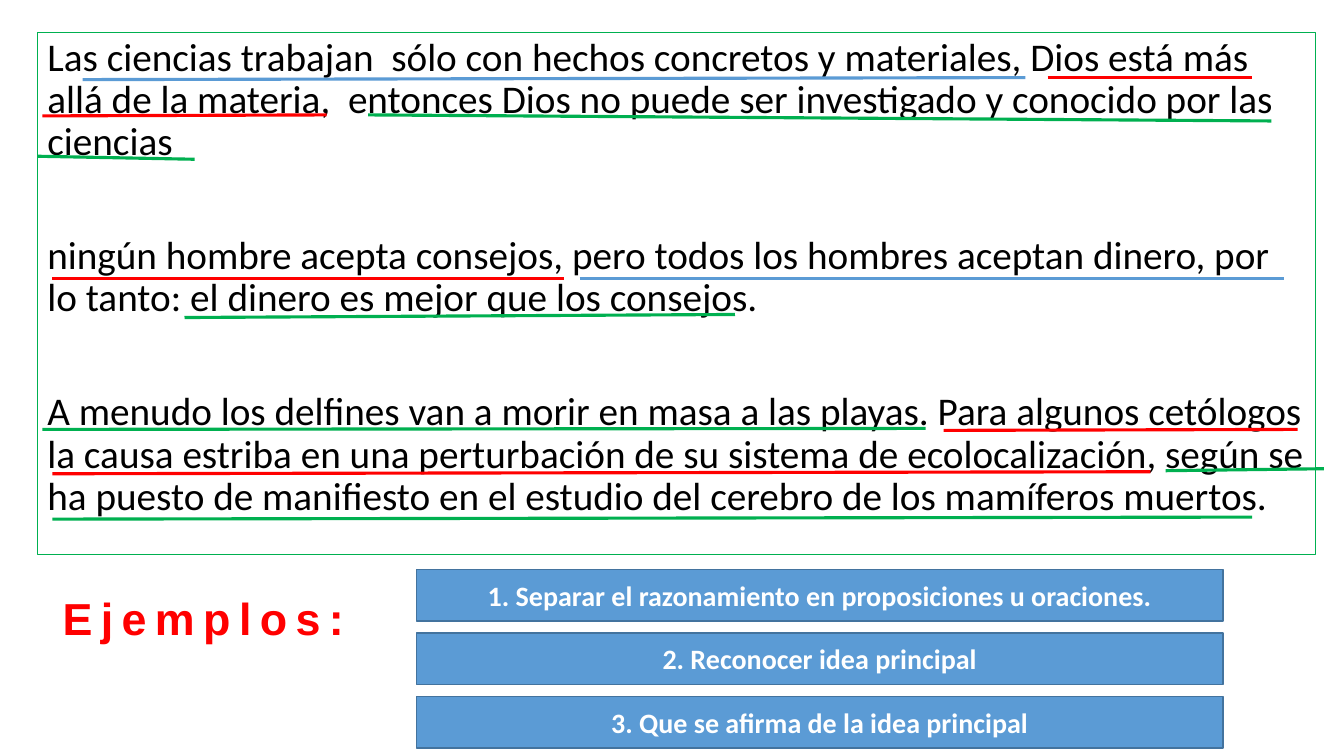
from lxml.etree import SubElement
from pptx import Presentation
from pptx.dml.color import RGBColor
from pptx.enum.shapes import MSO_CONNECTOR, MSO_SHAPE
from pptx.enum.text import MSO_ANCHOR, MSO_AUTO_SIZE, PP_ALIGN
from pptx.oxml.ns import qn
from pptx.util import Inches, Pt

COLORS = {
    "green": "00B050",
    "red": "FF0000",
    "blue": "5B9BD5",
    "edge": "43739E",
    "black": "000000",
    "white": "FFFFFF",
}
HEADING = "Ejemplos:"
ARGUMENTS = [
    "Las ciencias trabajan  sólo con hechos concretos y materiales, Dios está más allá de la materia,  "
    "entonces Dios no puede ser investigado y conocido por las ciencias",
    "ningún hombre acepta consejos, pero todos los hombres aceptan dinero, por lo tanto: "
    "el dinero es mejor que los consejos.",
    "A menudo los delfines van a morir en masa a las playas. Para algunos cetólogos la causa estriba "
    "en una perturbación de su sistema de ecolocalización, según se ha puesto de manifiesto en el "
    "estudio del cerebro de los mamíferos muertos.",
]
STEPS = [
    "1. Separar el razonamiento en proposiciones u oraciones.",
    "2. Reconocer idea principal",
    "3. Que se afirma de la idea principal",
]
UNDERLINES = [
    ("blue", 0.82, 0.79, 10.17, 0.77),
    ("red", 10.39, 0.77, 12.42, 0.77),
    ("red", 0.42, 1.15, 3.24, 1.14),
    ("green", 3.65, 1.14, 12.61, 1.2),
    ("green", 0.37, 1.55, 1.93, 1.58),
    ("green", 0.42, 4.26, 9.18, 4.25),
    ("red", 9.36, 4.27, 12.87, 4.26),
    ("red", 0.52, 4.7, 11.41, 4.68),
    ("green", 0.52, 5.15, 12.42, 5.13),
    ("green", 11.56, 4.67, 13.13, 4.65),
    ("green", 1.83, 3.15, 7.29, 3.12),
    ("red", 0.52, 2.76, 5.59, 2.76),
    ("blue", 5.75, 2.76, 12.73, 2.76),
]
STEP_TOP, STEP_PITCH = 5.65, 0.63


def color(name):
    return RGBColor.from_string(COLORS[name])


def place(shape, left, top, width, height):
    shape.left, shape.top = Inches(left), Inches(top)
    shape.width, shape.height = Inches(width), Inches(height)


def set_line(line, name, width):
    line.color.rgb = color(name)
    line.width = Pt(width)


def set_font(para, face, size, name, bold=False):
    para.font.name, para.font.size, para.font.bold = face, Pt(size), bold
    para.font.color.rgb = color(name)


def write_heading(box):
    place(box, 0.52, 5.81, 3.13, 0.64)
    frame = box.text_frame
    frame.text = HEADING
    frame.auto_size = MSO_AUTO_SIZE.NONE
    frame.vertical_anchor = MSO_ANCHOR.TOP
    para = frame.paragraphs[0]
    para.alignment = PP_ALIGN.LEFT
    set_font(para, "Arial", 32, "red", True)
    para.runs[0].font._element.set("spc", "600")


def write_arguments(box):
    place(box, 0.37, 0.32, 12.68, 5.18)
    set_line(box.line, "green", 0.75)
    frame = box.text_frame
    frame.text = "\n".join(ARGUMENTS)
    frame.auto_size = MSO_AUTO_SIZE.NONE
    for index, para in enumerate(frame.paragraphs):
        para.line_spacing = 0.9
        para.space_before = Pt(51 if index else 10)
        set_font(para, "Calibri", 28, "black")
        properties = para._p.get_or_add_pPr()
        properties.set("marL", "0")
        properties.set("indent", "0")
        default_run = properties.find(qn("a:defRPr"))
        default_run.addprevious(SubElement(properties, qn("a:buNone")))


def draw_underline(page, name, x1, y1, x2, y2):
    stroke = page.shapes.add_connector(
        MSO_CONNECTOR.STRAIGHT, Inches(x1), Inches(y1), Inches(x2), Inches(y2)
    )
    set_line(stroke.line, name, 2.25)
    SubElement(stroke._element.spPr, qn("a:effectLst"))


def draw_step(page, index, text):
    box = page.shapes.add_shape(
        MSO_SHAPE.RECTANGLE, Inches(4.13), Inches(STEP_TOP + index * STEP_PITCH), Inches(8), Inches(0.51)
    )
    box.shadow.inherit = False
    box.fill.solid()
    box.fill.fore_color.rgb = color("blue")
    set_line(box.line, "edge", 1)
    frame = box.text_frame
    frame.text = text
    frame.word_wrap = True
    frame.vertical_anchor = MSO_ANCHOR.MIDDLE
    para = frame.paragraphs[0]
    para.alignment = PP_ALIGN.CENTER
    set_font(para, "Calibri", 20, "white", True)


def main():
    deck = Presentation()
    deck.slide_width, deck.slide_height = Inches(13.33), Inches(7.5)
    page = deck.slides.add_slide(deck.slide_layouts[1])
    write_heading(page.shapes.title)
    write_arguments(page.placeholders[1])
    for underline in UNDERLINES:
        draw_underline(page, *underline)
    for index, text in enumerate(STEPS):
        draw_step(page, index, text)
    deck.save("out.pptx")


if __name__ == "__main__":
    main()
